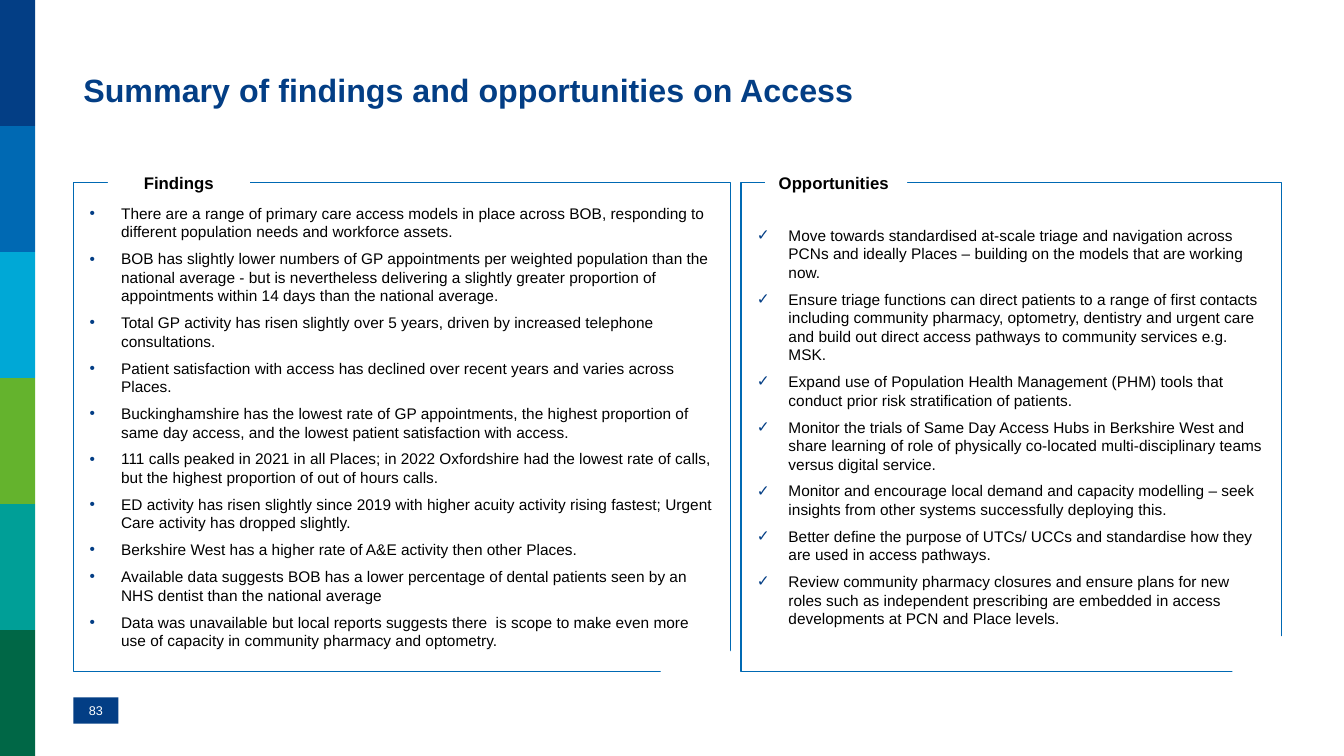
import lxml.etree
import pptx
import pptx.dml.color
import pptx.enum.shapes
import pptx.enum.text
import pptx.oxml.ns
import pptx.util

Pt = pptx.util.Pt
SHAPES = pptx.enum.shapes.MSO_SHAPE
ALIGN = pptx.enum.text.PP_ALIGN
ANCHOR = pptx.enum.text.MSO_ANCHOR

NAVY, BLUE, WHITE, BLACK = "033E85", "0069B3", "FFFFFF", "000000"
BANDS = [NAVY, BLUE, "00A8D6", "64B32D", "009F97", "006746"]
SLIDE_WIDTH, SLIDE_HEIGHT = 960, 540
LEFT_MARGIN = 52.5
PANEL_TOP, PANEL_HEIGHT = 130.3, 349.2
INDENT = 22.5

FINDINGS = [
    "There are a range of primary care access models in place across BOB, responding to different population needs and workforce assets.",
    "BOB has slightly lower numbers of GP appointments per weighted population than the national average - but is nevertheless delivering a slightly greater proportion of appointments within 14 days than the national average.",
    "Total GP activity has risen slightly over 5 years, driven by increased telephone consultations.",
    "Patient satisfaction with access has declined over recent years and varies across Places.",
    "Buckinghamshire has the lowest rate of GP appointments, the highest proportion of same day access, and the lowest patient satisfaction with access.",
    "111 calls peaked in 2021 in all Places; in 2022 Oxfordshire had the lowest rate of calls, but the highest proportion of out of hours calls.",
    "ED activity has risen slightly since 2019 with higher acuity activity rising fastest; Urgent Care activity has dropped slightly.",
    "Berkshire West has a higher rate of A&E activity then other Places.",
    "Available data suggests BOB has a lower percentage of dental patients seen by an NHS dentist than the national average",
    "Data was unavailable but local reports suggests there  is scope to make even more use of capacity in community pharmacy and optometry.",
]
OPPORTUNITIES = [
    "Move towards standardised at-scale triage and navigation across PCNs and ideally Places – building on the models that are working now.",
    "Ensure triage functions can direct patients to a range of first contacts including community pharmacy, optometry, dentistry and urgent care and build out direct access pathways to community services e.g. MSK.",
    "Expand use of Population Health Management (PHM) tools that conduct prior risk stratification of patients.",
    "Monitor the trials of Same Day Access Hubs in Berkshire West and share learning of role of physically co-located multi-disciplinary teams versus digital service.",
    "Monitor and encourage local demand and capacity modelling – seek insights from other systems successfully deploying this.",
    "Better define the purpose of UTCs/ UCCs and standardise how they are used in access pathways.",
    "Review community pharmacy closures and ensure plans for new roles such as independent prescribing are embedded in access developments at PCN and Place levels.",
]


def colour(hex_string):
    return pptx.dml.color.RGBColor.from_string(hex_string)


def set_attributes(target, values):
    for name, value in values.items():
        setattr(target, name, value)


def add_box(page, bounds, fill=None, line=None, line_width=1, preset=SHAPES.RECTANGLE):
    box = page.shapes.add_shape(preset, *[Pt(length) for length in bounds])
    box.shadow.inherit = False
    if fill:
        box.fill.solid()
        box.fill.fore_color.rgb = colour(fill)
    else:
        box.fill.background()
    if line:
        box.line.color.rgb = colour(line)
        box.line.width = Pt(line_width)
    else:
        box.line.fill.background()
    return box


def set_frame(box, anchor, inset_x, inset_y):
    set_attributes(box.text_frame, {
        "word_wrap": True, "vertical_anchor": anchor,
        "margin_left": Pt(inset_x), "margin_right": Pt(inset_x),
        "margin_top": Pt(inset_y), "margin_bottom": Pt(inset_y),
    })


def write(para, text, size, text_colour, bold=False, align=ALIGN.LEFT):
    para.alignment = align
    span = para.add_run()
    span.text = text
    set_attributes(span.font, {"name": "Arial", "size": Pt(size), "bold": bold})
    span.font.color.rgb = colour(text_colour)


def add_bullet(para, mark):
    """Give the paragraph a hanging indent and a navy bullet mark."""
    qn = pptx.oxml.ns.qn
    properties = para._p.get_or_add_pPr()
    properties.set("marL", str(Pt(INDENT)))
    properties.set("indent", str(-Pt(INDENT)))
    bullet_colour = lxml.etree.SubElement(properties, qn("a:buClr"))
    lxml.etree.SubElement(bullet_colour, qn("a:srgbClr"), val=NAVY)
    lxml.etree.SubElement(properties, qn("a:buFont"), typeface="Arial")
    lxml.etree.SubElement(properties, qn("a:buChar"), char=mark)


def add_label(page, bounds, text, size, text_colour, fill=WHITE, bold=True,
              align=ALIGN.CENTER, anchor=ANCHOR.TOP, inset_x=0, inset_y=0):
    box = add_box(page, bounds, fill)
    set_frame(box, anchor, inset_x, inset_y)
    write(box.text_frame.paragraphs[0], text, size, text_colour, bold, align)


def add_panel(page, left, width, heading, heading_left, circle_left, mark, items):
    """Draw a bulleted frame broken by its heading and a white corner circle."""
    panel = add_box(page, (left, PANEL_TOP, width, PANEL_HEIGHT), line=BLUE)
    set_frame(panel, ANCHOR.MIDDLE, 11.5, 11.5)
    frame = panel.text_frame
    for index, item in enumerate(items):
        para = frame.add_paragraph() if index else frame.paragraphs[0]
        add_bullet(para, mark)
        para.space_after = Pt(6)
        write(para, item, 11, BLACK)
    add_box(page, (circle_left, 454.3, 52.5, 51), WHITE, WHITE, 2, SHAPES.OVAL)
    add_label(page, (heading_left, 123.3, 101.5, 14.4), heading, 12, BLACK)


def add_side_bands(page):
    height = SLIDE_HEIGHT / len(BANDS)
    for index, fill in enumerate(BANDS):
        add_box(page, (0, index * height, 25.2, height), fill)


def main():
    deck = pptx.Presentation()
    deck.slide_width, deck.slide_height = Pt(SLIDE_WIDTH), Pt(SLIDE_HEIGHT)
    page = deck.slides.add_slide(deck.slide_layouts[6])
    add_side_bands(page)
    add_label(page, (LEFT_MARGIN, 498.2, 32, 18.7), "83", 9, WHITE, NAVY,
              bold=False, anchor=ANCHOR.MIDDLE)
    add_label(page, (LEFT_MARGIN, 47, 856.8, 49), "Summary of findings and opportunities on Access",
              23, NAVY, align=ALIGN.LEFT, inset_x=7.2, inset_y=3.6)
    add_panel(page, LEFT_MARGIN, 469.4, "Findings", 77, 473, "•", FINDINGS)
    add_panel(page, 529.2, 386, "Opportunities ", 546.5, 881.3, "✓", OPPORTUNITIES)
    deck.save("out.pptx")


if __name__ == "__main__":
    main()
